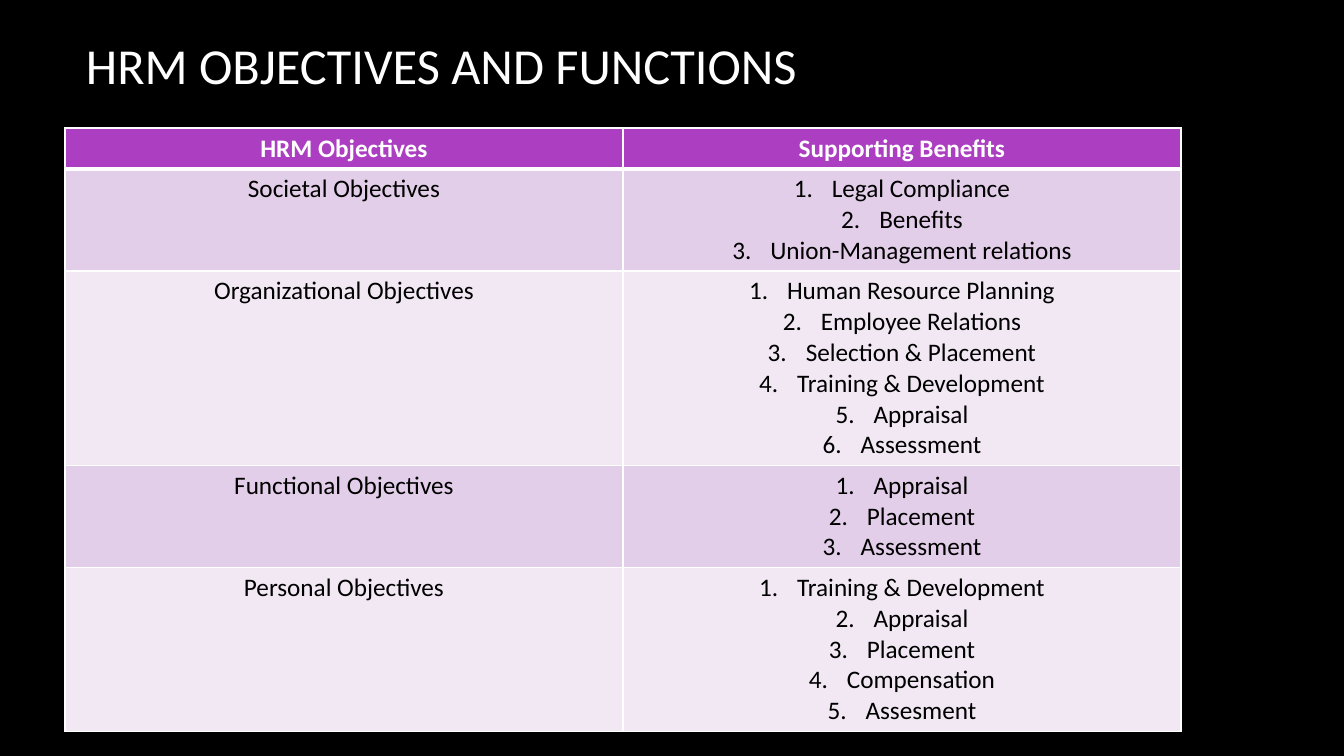
import dataclasses

import lxml.etree
import pptx
import pptx.dml.color
import pptx.enum.text
import pptx.oxml.ns
import pptx.util

EMU_PER_PX = 914400 / 100.8
ALIGN = pptx.enum.text.PP_ALIGN
ANCHOR = pptx.enum.text.MSO_ANCHOR


@dataclasses.dataclass(frozen=True)
class Theme:
    font: str = "Calibri"
    title_size: int = 36
    body_size: int = 18
    background: str = "000000"
    light: str = "FFFFFF"
    dark: str = "000000"
    header: str = "AC3EC1"
    bands: tuple = ("E3CEE9", "F1E8F4")
    border: int = 1
    header_border: int = 3


def px(n):
    return pptx.util.Emu(round(n * EMU_PER_PX))


def rgb(value):
    return pptx.dml.color.RGBColor.from_string(value)


def add_child(parent, tag, **attrs):
    child = lxml.etree.SubElement(parent, pptx.oxml.ns.qn(tag))
    for name, value in attrs.items():
        child.set(name, str(value))
    return child


def write(p, text, *, font, size, color, bold=False, align=ALIGN.LEFT, number_indent=0):
    if number_indent:
        pPr = p._p.get_or_add_pPr()
        pPr.set("marL", str(px(number_indent)))
        pPr.set("indent", str(-px(number_indent)))
        add_child(pPr, "a:buAutoNum", type="arabicPeriod")
    p.alignment = align
    r = p.add_run()
    r.text = text
    r.font.name = font
    r.font.size = pptx.util.Pt(size)
    r.font.bold = bold
    r.font.color.rgb = rgb(color)


class Deck:
    def __init__(self, theme):
        self.theme = theme
        self.prs = pptx.Presentation()
        self.prs.slide_width, self.prs.slide_height = px(1344), px(756)

    def slide(self):
        self.s = self.prs.slides.add_slide(self.prs.slide_layouts[6])
        fill = self.s.background.fill
        fill.solid()
        fill.fore_color.rgb = rgb(self.theme.background)

    def title(self, text, x, y, w, h):
        t = self.theme
        tf = self.s.shapes.add_textbox(px(x), px(y), px(w), px(h)).text_frame
        tf.word_wrap = True
        tf.vertical_anchor = ANCHOR.MIDDLE
        write(tf.paragraphs[0], text, font=t.font, size=t.title_size, color=t.light)

    def cell(self, cell, lines, fill, top, bottom, **style):
        t = self.theme
        tcPr = cell._tc.get_or_add_tcPr()
        widths = {"a:lnL": t.border, "a:lnR": t.border, "a:lnT": top, "a:lnB": bottom}
        for tag, width in widths.items():
            ln = add_child(tcPr, tag, w=pptx.util.Pt(width))
            add_child(add_child(ln, "a:solidFill"), "a:srgbClr", val=t.light)
        cell.fill.solid()
        cell.fill.fore_color.rgb = rgb(fill)
        tf = cell.text_frame
        for i, line in enumerate(lines):
            p = tf.add_paragraph() if i else tf.paragraphs[0]
            write(p, line, font=t.font, size=t.body_size, align=ALIGN.CENTER, **style)

    def table(self, header, rows, x, y, col_width, line_height, padding, number_indent):
        t = self.theme
        heights = [padding + line_height] + [
            padding + line_height * len(benefits) for _, benefits in rows
        ]
        table = self.s.shapes.add_table(
            len(heights), len(header), px(x), px(y),
            px(col_width * len(header)), px(sum(heights)),
        ).table
        table.horz_banding = False
        for column in table.columns:
            column.width = px(col_width)
        for row, height in zip(table.rows, heights):
            row.height = px(height)
        for c, label in enumerate(header):
            self.cell(table.cell(0, c), [label], t.header, t.border, t.header_border,
                      color=t.light, bold=True)
        for i, (objective, benefits) in enumerate(rows):
            fill = t.bands[i % len(t.bands)]
            top = t.border if i else t.header_border
            self.cell(table.cell(i + 1, 0), [objective], fill, top, t.border, color=t.dark)
            self.cell(table.cell(i + 1, 1), benefits, fill, top, t.border,
                      color=t.dark, number_indent=number_indent)


OBJECTIVES = [
    ("Societal Objectives",
     ["Legal Compliance", "Benefits", "Union-Management relations"]),
    ("Organizational Objectives",
     ["Human Resource Planning", "Employee Relations", "Selection & Placement",
      "Training & Development", "Appraisal", "Assessment"]),
    ("Functional Objectives",
     ["Appraisal", "Placement", "Assessment"]),
    ("Personal Objectives",
     ["Training & Development", "Appraisal", "Placement", "Compensation", "Assesment"]),
]


def main():
    deck = Deck(Theme())
    deck.slide()
    deck.title("HRM OBJECTIVES AND FUNCTIONS", 76, 26, 1117, 76)
    deck.table(("HRM Objectives", "Supporting Benefits"), OBJECTIVES, x=65, y=128,
               col_width=558, line_height=30.75, padding=10, number_indent=38)
    deck.prs.save("out.pptx")


if __name__ == "__main__":
    main()
